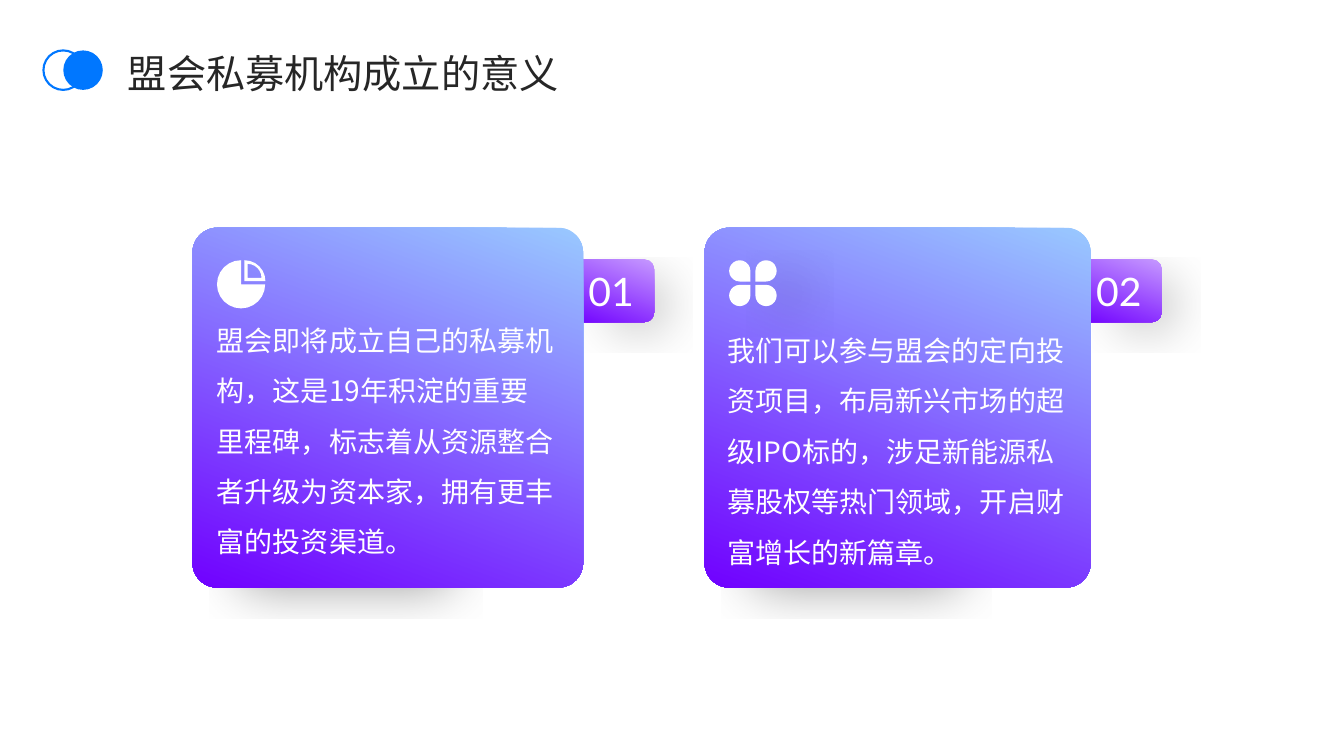
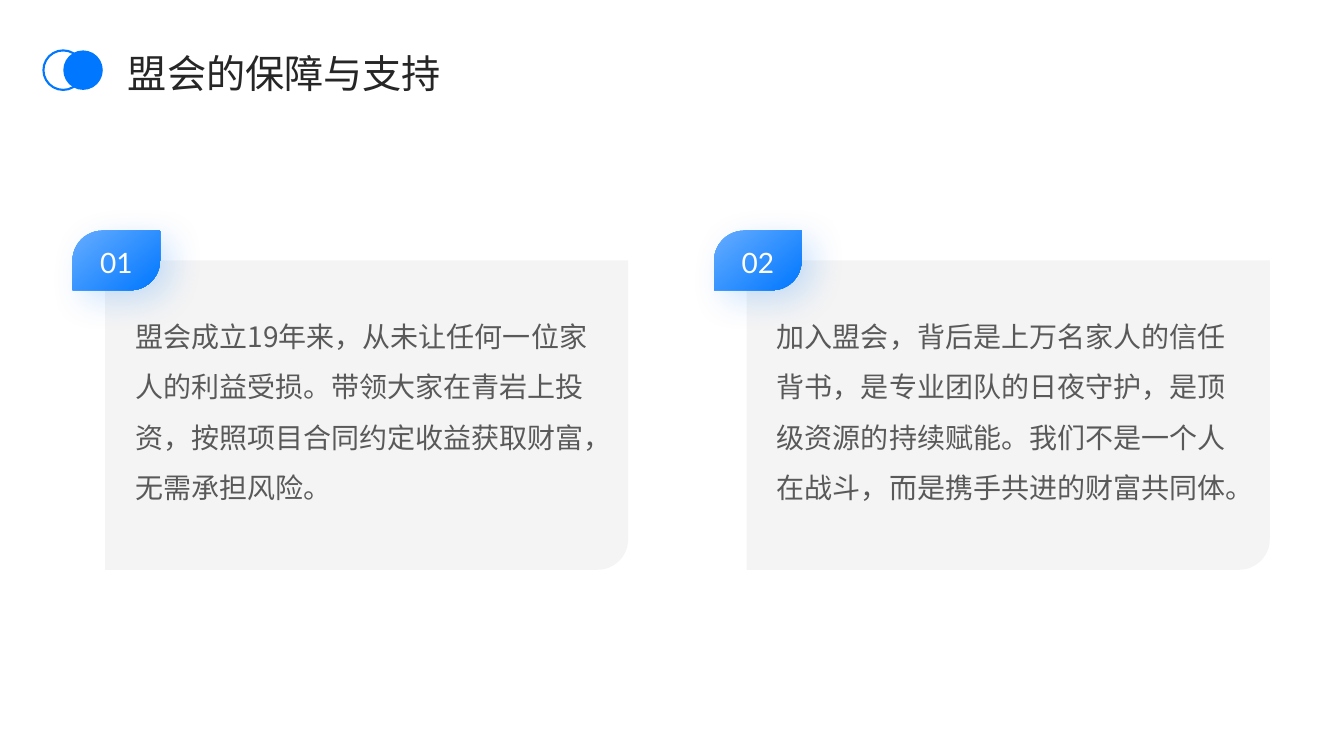
from math import cos, radians, sin, sqrt

from lxml.etree import SubElement
from pptx import Presentation
from pptx.dml.color import RGBColor
from pptx.enum.shapes import MSO_SHAPE as SHAPE
from pptx.enum.text import MSO_ANCHOR as ANCHOR, PP_ALIGN as ALIGN
from pptx.oxml.ns import qn
from pptx.util import Pt

COLORS = {
    "blue": "0077FF", "sky": "66ADFF", "title": "262626", "body": "595959",
    "panel": "F2F2F2", "white": "FFFFFF", "black": "000000",
    "violet": "7000FF", "lilac": "C699FF", "azure": "99C9FF",
}
CJK, LATIN = "Noto Sans CJK SC", "Lato"

# Text styles
TITLE = {"size": 28, "font": CJK, "color": "title", "spacing": 1.2, "anchor": ANCHOR.MIDDLE}
CARD_TEXT = {"size": 20, "font": CJK, "color": "white", "spacing": 1.5}
PANEL_TEXT = CARD_TEXT | {"color": "body"}
CARD_NUMBER = {"size": 28, "font": LATIN, "color": "white"}
PANEL_NUMBER = {"size": 20, "font": LATIN, "color": "white", "spacing": 1.1,
                "anchor": ANCHOR.MIDDLE, "align": ALIGN.CENTER}

# Shadows: colour, opacity %, blur, distance, direction, scale %, alignment
DEEP = ("black", 40, 40, 34, 359, 54, "bl")
GLOW = ("blue", 20, 25, 10, 40, 100, "ctr")


def rgb(name):
    return RGBColor.from_string(COLORS[name])


def add_alpha(color, percent):
    SubElement(color, qn("a:alpha"), val=str(percent * 1000))


def add_shadow(sp, shadow):
    color, alpha, blur, dist, angle, scale, align = shadow
    effects = sp._element.spPr.find(qn("a:effectLst"))
    outer = SubElement(
        effects, qn("a:outerShdw"), blurRad=str(Pt(blur)), dist=str(Pt(dist)),
        dir=str(angle * 60000), sx=str(scale * 1000), sy=str(scale * 1000),
        algn=align, rotWithShape="0")
    add_alpha(SubElement(outer, qn("a:srgbClr"), val=COLORS[color]), alpha)


def paint(sp, fill=None, line=None, gradient=None, angle=0, alpha=None, shadow=None):
    sp.shadow.inherit = False
    if gradient:
        sp.fill.gradient()
        sp.fill.gradient_angle = 360 - angle
        for stop, name in zip(sp.fill.gradient_stops, gradient):
            stop.color.rgb = rgb(name)
    elif fill:
        sp.fill.solid()
        sp.fill.fore_color.rgb = rgb(fill)
        if alpha:
            add_alpha(sp._element.spPr.find(qn("a:solidFill"))[0], alpha)
    else:
        sp.fill.background()
    if line:
        sp.line.color.rgb = rgb(line)
        sp.line.width = Pt(1.5)
    else:
        sp.line.fill.background()
    if shadow:
        add_shadow(sp, shadow)


def add_box(slide, kind, box, adjustments=(), **look):
    sp = slide.shapes.add_shape(kind, *map(Pt, box))
    for i, value in enumerate(adjustments):
        sp.adjustments[i] = value
    paint(sp, **look)


def add_text(slide, text, box, style):
    tf = slide.shapes.add_textbox(*map(Pt, box)).text_frame
    frame = {"word_wrap": True, "vertical_anchor": style.get("anchor", ANCHOR.TOP)}
    frame |= dict.fromkeys(("margin_left", "margin_top", "margin_right", "margin_bottom"), 0)
    for name, value in frame.items():
        setattr(tf, name, value)
    p = tf.paragraphs[0]
    p.alignment = style.get("align", ALIGN.LEFT)
    p.line_spacing = style.get("spacing", 1.0)
    r = p.add_run()
    r.text = text
    for name, value in {"size": Pt(style["size"]), "name": style["font"]}.items():
        setattr(r.font, name, value)
    r.font.color.rgb = rgb(style["color"])
    SubElement(r._r.get_or_add_rPr(), qn("a:ea"), typeface=style["font"])


# Icons: each is a list of closed outlines
def arc(cx, cy, radius, start, end, step=18):
    return [(cx + radius * cos(radians(a)), cy + radius * sin(radians(a)))
            for a in range(start, end + 1, step)]


def pie_outlines():
    sectors = [(17.2, 17.2, 17.2, 0, 270), (19.6, 15, 15, 270, 360), (21.8, 12.6, 10, 270, 360)]
    return [[(s[0], s[1])] + arc(*s, step=15) for s in sectors]


def clover_outlines():
    radius, near, far_x, far_y = 7.6, 7.6, 26.4, 25.2
    outlines = []
    for i, (cx, cy) in enumerate([(near, near), (far_x, near), (far_x, far_y), (near, far_y)]):
        turn = 90 * i
        corner = arc(cx, cy, radius * sqrt(2), 45 + turn, 45 + turn)
        outlines.append(corner + arc(cx, cy, radius, 90 + turn, 360 + turn))
    return outlines


def add_icon(slide, outlines, x, y, **look):
    builder = None
    for outline in outlines:
        first, *rest = [(Pt(x + dx), Pt(y + dy)) for dx, dy in outline]
        if builder is None:
            builder = slide.shapes.build_freeform(*first)
        else:
            builder.move_to(*first)
        builder.add_line_segments(rest, close=True)
    paint(builder.convert_to_shape(), fill="white", **look)


# Title with two overlapping rings
def add_header(slide, title):
    add_text(slide, title, (91.4, 31.7, 786, 33.8), TITLE)
    for x, look in ((31, {"line": "blue"}), (45.2, {"fill": "blue"})):
        add_box(slide, SHAPE.OVAL, (x, 36, 28.2, 28.2), **look)


# Violet card with a number tab behind its right edge
def add_card(slide, box, number, text, text_at, outlines, icon_shadow):
    x, y, w, h = box
    right = x + w
    text_left, text_top = text_at
    add_box(slide, SHAPE.ROUNDED_RECTANGLE, (right - 11.3, y + 22.6, 62, 44.8), [0.155],
            gradient=("lilac", "violet"), angle=110, shadow=DEEP)
    add_box(slide, SHAPE.ROUNDED_RECTANGLE, box, [0.069],
            gradient=("azure", "violet"), angle=110, shadow=DEEP)
    add_text(slide, text, (x + text_left, y + text_top, 242.4, h - text_top), CARD_TEXT)
    add_icon(slide, outlines, x + 17.5, y + 23.2, shadow=icon_shadow)
    add_text(slide, number, (right + 3.8, y + 28.1, 44.6, 28), CARD_NUMBER)


# Grey panel with a blue number badge on its top left corner
def add_panel(slide, box, number, text):
    x, y, w, h = box
    add_box(slide, SHAPE.ROUND_2_DIAG_RECTANGLE, box, [0.099, 0], fill="panel", alpha=80)
    add_box(slide, SHAPE.ROUND_2_DIAG_RECTANGLE, (x - 23.2, y - 21.2, 62.5, 42.5), [0.5, 0],
            gradient=("sky", "blue"), angle=50, shadow=GLOW)
    add_text(slide, text, (x + 21.6, y + 30.2, w - 43.2, 161.3), PANEL_TEXT)
    add_text(slide, number, (x - 13.2, y - 13.9, 42.5, 28), PANEL_NUMBER)


def meaning_slide(slide):
    add_header(slide, "盟会私募机构成立的意义")
    add_card(slide, (137.5, 162.7, 279, 257), "01",
             "盟会即将成立自己的私募机构，这是19年积淀的重要里程碑，"
             "标志着从资源整合者升级为资本家，拥有更丰富的投资渠道。",
             (17.4, 56.2), pie_outlines(), None)
    add_card(slide, (503.3, 162.7, 275.8, 257), "02",
             "我们可以参与盟会的定向投资项目，布局新兴市场的超级IPO标的，"
             "涉足新能源私募股权等热门领域，开启财富增长的新篇章。",
             (16.4, 63.5), clover_outlines(), DEEP)


def support_slide(slide):
    add_header(slide, "盟会的保障与支持")
    texts = (
        "盟会成立19年来，从未让任何一位家人的利益受损。带领大家在青岩上投资，"
        "按照项目合同约定收益获取财富，无需承担风险。",
        "加入盟会，背后是上万名家人的信任背书，是专业团队的日夜守护，"
        "是顶级资源的持续赋能。我们不是一个人在战斗，而是携手共进的财富共同体。",
    )
    for i, text in enumerate(texts):
        add_panel(slide, (75 + 458.3 * i, 186, 373.7, 221), f"{i + 1:02}", text)


def main():
    prs = Presentation()
    prs.slide_width, prs.slide_height = Pt(960), Pt(540)
    for build in (meaning_slide, support_slide):
        build(prs.slides.add_slide(prs.slide_layouts[6]))
    prs.save("out.pptx")


if __name__ == "__main__":
    main()
